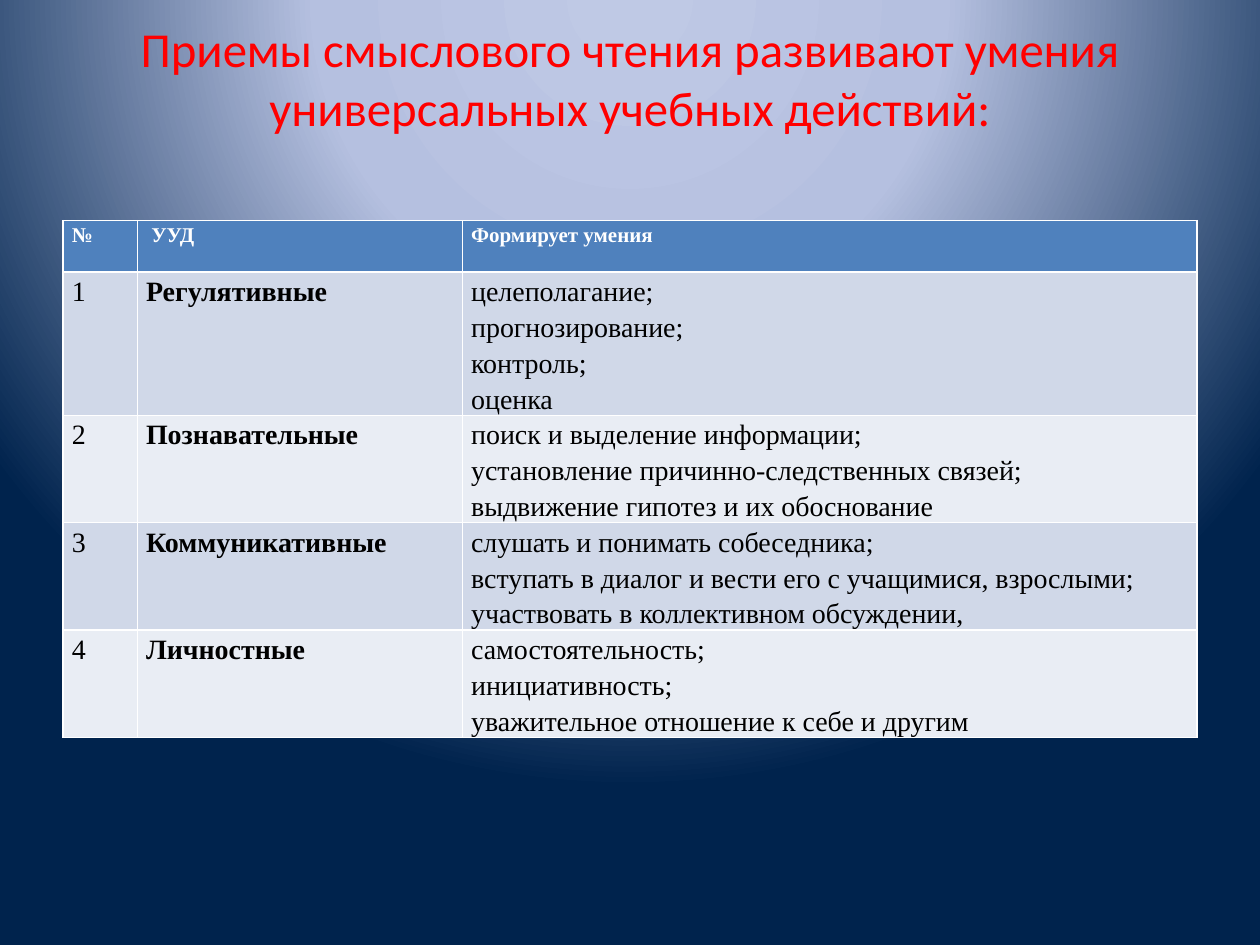
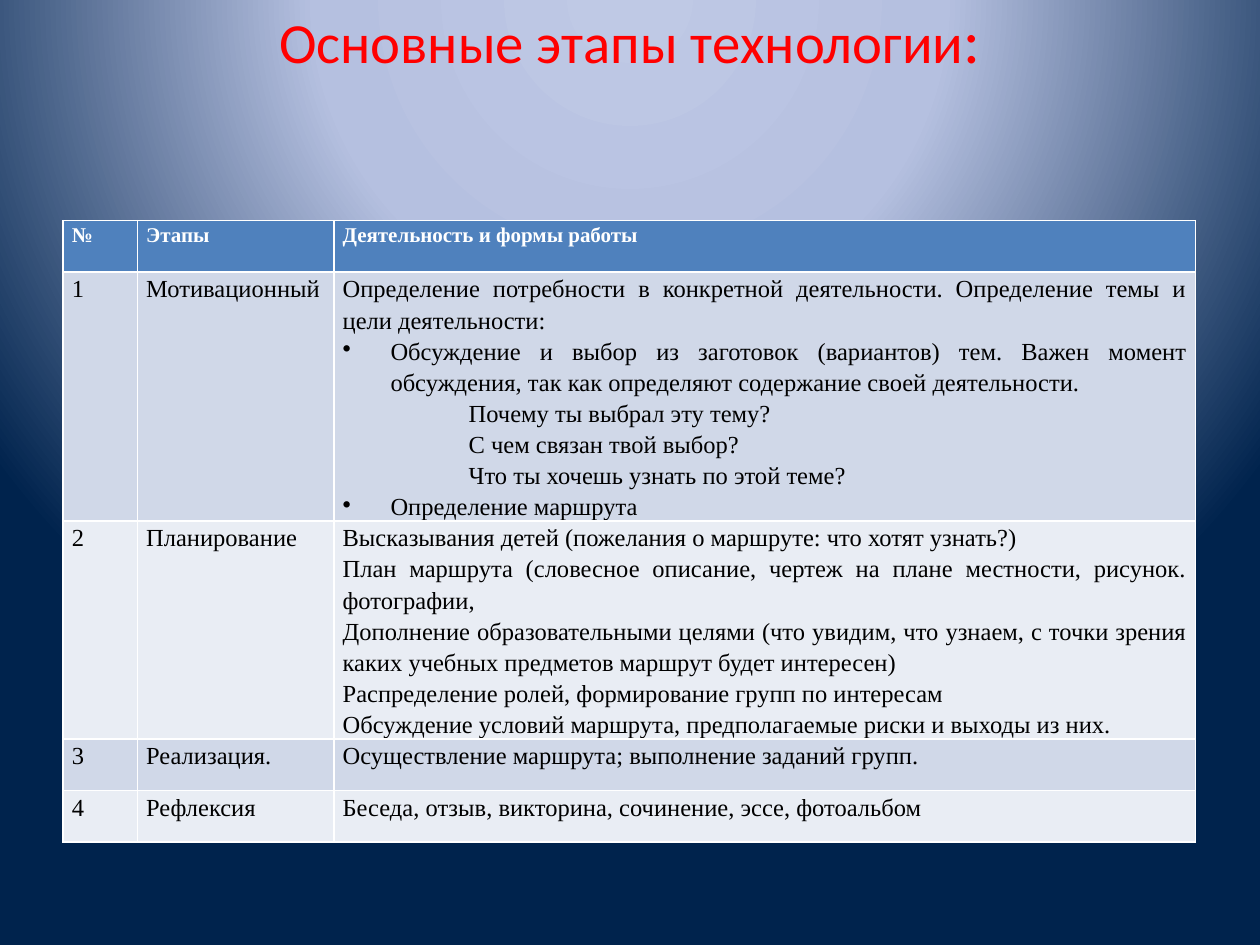
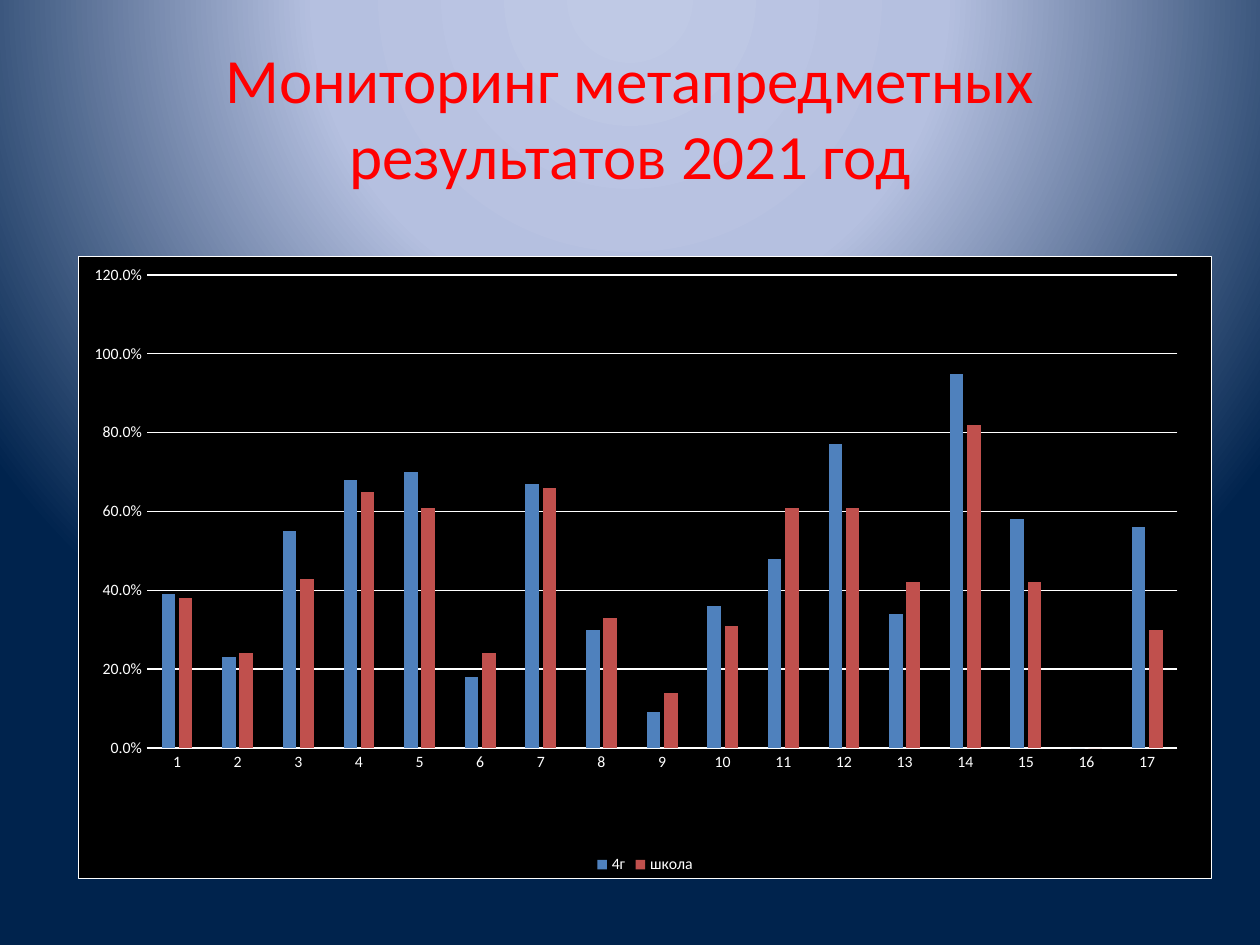
from dataclasses import dataclass

from pptx import Presentation
from pptx import util as u
from pptx.chart.data import CategoryChartData
from pptx.dml.color import RGBColor
from pptx.enum import chart as charts, text
from pptx.oxml import parse_xml
from pptx.oxml.ns import nsdecls, qn


@dataclass(frozen=True)
class Theme:
    """Colours, fonts and type sizes shared by the slides."""
    title_font: str = "Calibri"
    table_font: str = "Times New Roman"
    title: str = "FF0000"
    white: str = "FFFFFF"
    black: str = "000000"
    blue: str = "4F81BD"
    red: str = "C0504D"
    bands: tuple = ("D0D8E8", "E9EDF4")
    glow: tuple = ((0, "BFC9E5"), (40, "B5C0E0"), (100, "00234D"))
    header_size: float = 12
    chart_size: float = 9
    line_width: float = 0.75


@dataclass(frozen=True)
class Indented:
    """A cell paragraph with a left indent and an optional bullet."""
    words: str
    left: float
    bullet: str = ""


THEME = Theme()
TITLE_BOX = (0.5, 0.3, 9, 1.25)
TABLE_BOX = (0.5, 1.75, 9)
CHART_BOX = (0.62, 2.03, 9, 4.95)
PLOT_BOX = (0.06, 0.03, 0.91, 0.76)
ROW_HEIGHT = 0.41

SKILL_COLUMNS = (0.59, 2.58, 5.83)
SKILL_HEADER = ("№", " УУД", "Формирует умения")
SKILLS = (
    ("Регулятивные", ("целеполагание;", "прогнозирование;", "контроль;", "оценка")),
    ("Познавательные", (
        "поиск и выделение информации;",
        "установление причинно-следственных связей;",
        "выдвижение гипотез и их обоснование")),
    ("Коммуникативные", (
        "слушать и понимать собеседника;",
        "вступать в диалог и вести его с учащимися, взрослыми;",
        "участвовать в коллективном обсуждении,")),
    ("Личностные", (
        "самостоятельность;",
        "инициативность;",
        "уважительное отношение к себе и другим")),
)

STAGE_COLUMNS = (0.59, 1.56, 6.84)
STAGE_HEADER = ("№", "Этапы", "Деятельность и формы работы")
STAGES = (
    ("Мотивационный", (
        "Определение потребности в конкретной деятельности. "
        "Определение темы и цели деятельности:",
        Indented("Обсуждение и выбор из заготовок (вариантов) тем. Важен момент "
                 "обсуждения, так как определяют содержание своей деятельности.", 0.38, "•"),
        Indented("Почему ты выбрал эту тему?", 1),
        Indented("С чем связан твой выбор?", 1),
        Indented("Что ты хочешь узнать по этой теме?", 1),
        Indented("Определение маршрута", 0.38, "•"))),
    ("Планирование", (
        "Высказывания детей (пожелания о маршруте: что хотят узнать?)",
        "План маршрута (словесное описание, чертеж на плане местности, рисунок. фотографии,",
        "Дополнение образовательными целями (что увидим, что узнаем, с точки зрения "
        "каких учебных предметов маршрут будет интересен)",
        "Распределение ролей, формирование групп по интересам",
        "Обсуждение условий маршрута, предполагаемые риски и выходы из них.")),
    ("Реализация.", ("Осуществление маршрута; выполнение заданий групп.",)),
    ("Рефлексия", ("Беседа, отзыв, викторина, сочинение, эссе, фотоальбом",)),
)

RESULTS = (
    ("4г", THEME.blue, (0.39, 0.23, 0.55, 0.68, 0.7, 0.18, 0.67, 0.3, 0.09,
                        0.36, 0.48, 0.77, 0.34, 0.95, 0.58, 0, 0.56)),
    ("школа", THEME.red, (0.38, 0.24, 0.43, 0.65, 0.61, 0.24, 0.66, 0.33, 0.14,
                          0.31, 0.61, 0.61, 0.42, 0.82, 0.42, 0, 0.3)),
)


def rgb(value):
    """Return a colour object for a hex string."""
    return RGBColor.from_string(value)


def style_font(font, *, size, color, name=THEME.title_font, bold=False):
    """Format a font."""
    font.size, font.name, font.bold = u.Pt(size), name, bold
    font.color.rgb = rgb(color)


def write(paragraph, words, *, align=None, spacing=None, left=0, bullet="", **font):
    """Add a formatted run to a paragraph, with alignment, indent and bullet."""
    run = paragraph.add_run()
    run.text = words
    style_font(run.font, **font)
    if align is not None:
        paragraph.alignment = align
    if spacing is not None:
        paragraph.line_spacing = spacing
    if left:
        properties = paragraph._p.get_or_add_pPr()
        properties.set("marL", str(u.Inches(left)))
        properties.set("indent", str(u.Inches(-left if bullet else 0)))
        if bullet:
            properties.append(parse_xml(f'<a:buChar {nsdecls("a")} char="{bullet}"/>'))


def set_background(master):
    """Give the slide master the radial glow used by every slide."""
    stops = "".join(
        f'<a:gs pos="{position * 1000}"><a:srgbClr val="{color}"/></a:gs>'
        for position, color in THEME.glow)
    background = parse_xml(
        f'<p:bg {nsdecls("p", "a")}><p:bgPr><a:gradFill rotWithShape="1">'
        f'<a:gsLst>{stops}</a:gsLst><a:path path="circle">'
        '<a:fillToRect l="50000" t="-80000" r="50000" b="180000"/></a:path>'
        '</a:gradFill><a:effectLst/></p:bgPr></p:bg>')
    content = master.element.find(qn("p:cSld"))
    for existing in content.findall(qn("p:bg")):
        content.remove(existing)
    content.insert(0, background)


def add_titled_slide(presentation, runs, box=TITLE_BOX, anchor=text.MSO_ANCHOR.MIDDLE):
    """Add a slide whose title holds the given (words, size) runs."""
    slide = presentation.slides.add_slide(presentation.slide_layouts[5])
    title = slide.shapes.title
    title.left, title.top, title.width, title.height = map(u.Inches, box)
    frame = title.text_frame
    frame.auto_size = text.MSO_AUTO_SIZE.NONE
    frame.word_wrap = True
    frame.vertical_anchor = anchor
    frame.margin_top = frame.margin_bottom = 0
    for words, size in runs:
        write(frame.paragraphs[0], words, size=size, color=THEME.title,
              align=text.PP_ALIGN.CENTER)
    return slide


def fill_cell(cell, items, fill, **font):
    """Fill a table cell with justified paragraphs."""
    cell.fill.solid()
    cell.fill.fore_color.rgb = rgb(fill)
    cell.margin_left = cell.margin_right = u.Inches(0.07)
    cell.margin_top = cell.margin_bottom = 0
    frame = cell.text_frame
    for index, item in enumerate(items):
        paragraph = frame.add_paragraph() if index else frame.paragraphs[0]
        indent = {}
        if isinstance(item, Indented):
            indent = {"left": item.left, "bullet": item.bullet}
            item = item.words
        write(paragraph, item, align=text.PP_ALIGN.JUSTIFY, spacing=1.15,
              name=THEME.table_font, **indent, **font)


def add_numbered_table(slide, box, columns, header, rows, size, bold_names=False):
    """Add a banded table of numbered names and their descriptions."""
    left, top, width = map(u.Inches, box)
    count = len(rows) + 1
    table = slide.shapes.add_table(
        count, len(columns), left, top, width, u.Inches(ROW_HEIGHT * count)).table
    for column, column_width in zip(table.columns, columns):
        column.width = u.Inches(column_width)
    for column, heading in enumerate(header):
        fill_cell(table.cell(0, column), [heading], THEME.blue,
                  size=THEME.header_size, color=THEME.white, bold=True)
    for number, (name, details) in enumerate(rows, 1):
        band = THEME.bands[(number - 1) % 2]
        for column, items in enumerate(([str(number)], [name], details)):
            fill_cell(table.cell(number, column), items, band, size=size,
                      color=THEME.black, bold=bold_names and column == 1)


def style_line(line):
    """Draw a thin white chart line."""
    line.color.rgb = rgb(THEME.white)
    line.width = u.Pt(THEME.line_width)


def style_axis(axis):
    """Format the labels and ticks of a chart axis."""
    axis.major_tick_mark = axis.minor_tick_mark = charts.XL_TICK_MARK.NONE
    style_font(axis.tick_labels.font, size=THEME.chart_size, color=THEME.white)


def style_chart_area(chart):
    """Set the chart's black bordered area and the inner plot box."""
    chart.element.find(qn("c:txPr")).addprevious(parse_xml(
        f'<c:spPr {nsdecls("c", "a")}>'
        f'<a:solidFill><a:srgbClr val="{THEME.black}"/></a:solidFill>'
        f'<a:ln w="{u.Pt(THEME.line_width)}"><a:solidFill>'
        f'<a:srgbClr val="{THEME.white}"/></a:solidFill></a:ln></c:spPr>'))
    plot_area = chart.element.find(qn("c:chart")).find(qn("c:plotArea"))
    for existing in plot_area.findall(qn("c:layout")):
        plot_area.remove(existing)
    modes = '<c:xMode val="edge"/><c:yMode val="edge"/>'
    sizes = "".join(f'<c:{side} val="{value}"/>' for side, value in zip("xywh", PLOT_BOX))
    plot_area.insert(0, parse_xml(
        f'<c:layout {nsdecls("c")}><c:manualLayout><c:layoutTarget val="inner"/>'
        f'{modes}{sizes}</c:manualLayout></c:layout>'))


def add_results_chart(slide, box):
    """Add the column chart comparing the class with the school."""
    data = CategoryChartData(number_format="0.0%")
    data.categories = [str(task) for task in range(1, len(RESULTS[0][2]) + 1)]
    for name, _, values in RESULTS:
        data.add_series(name, values)
    chart = slide.shapes.add_chart(
        charts.XL_CHART_TYPE.COLUMN_CLUSTERED, *map(u.Inches, box), data).chart
    chart.has_title = False
    style_font(chart.font, size=10, color=THEME.white)
    chart.has_legend = True
    chart.legend.position = charts.XL_LEGEND_POSITION.BOTTOM
    chart.legend.include_in_layout = False
    style_font(chart.legend.font, size=THEME.chart_size, color=THEME.white)

    plot = chart.plots[0]
    plot.gap_width, plot.overlap, plot.vary_by_categories = 219, -27, False
    for series, (_, color, _) in zip(plot.series, RESULTS):
        series.format.fill.solid()
        series.format.fill.fore_color.rgb = rgb(color)

    style_axis(chart.category_axis)
    style_line(chart.category_axis.format.line)
    values = chart.value_axis
    style_axis(values)
    values.minimum_scale, values.maximum_scale, values.major_unit = 0, 1.2, 0.2
    values.tick_labels.number_format = "0.0%"
    values.tick_labels.number_format_is_linked = False
    values.format.line.fill.background()
    values.has_major_gridlines = True
    style_line(values.major_gridlines.format.line)
    style_chart_area(chart)


def main():
    """Build and save the presentation."""
    presentation = Presentation()
    presentation.slide_width, presentation.slide_height = u.Inches(10), u.Inches(7.5)
    set_background(presentation.slide_master)
    top = text.MSO_ANCHOR.TOP

    skills = add_titled_slide(
        presentation,
        [("Приемы смыслового чтения развивают умения универсальных учебных действий:", 27.9)],
        box=(0.5, 0.15, 9, 1.25), anchor=top)
    add_numbered_table(skills, TABLE_BOX, SKILL_COLUMNS, SKILL_HEADER, SKILLS,
                       size=16, bold_names=True)

    stages = add_titled_slide(
        presentation, [("Основные этапы технологии", 32.4), (":", 36)],
        box=(0.5, 0, 9, 1.25), anchor=top)
    add_numbered_table(stages, TABLE_BOX, STAGE_COLUMNS, STAGE_HEADER, STAGES, size=14)

    results = add_titled_slide(
        presentation, [("Мониторинг метапредметных результатов 2021 год", 36)])
    add_results_chart(results, CHART_BOX)

    presentation.save("out.pptx")


if __name__ == "__main__":
    main()
